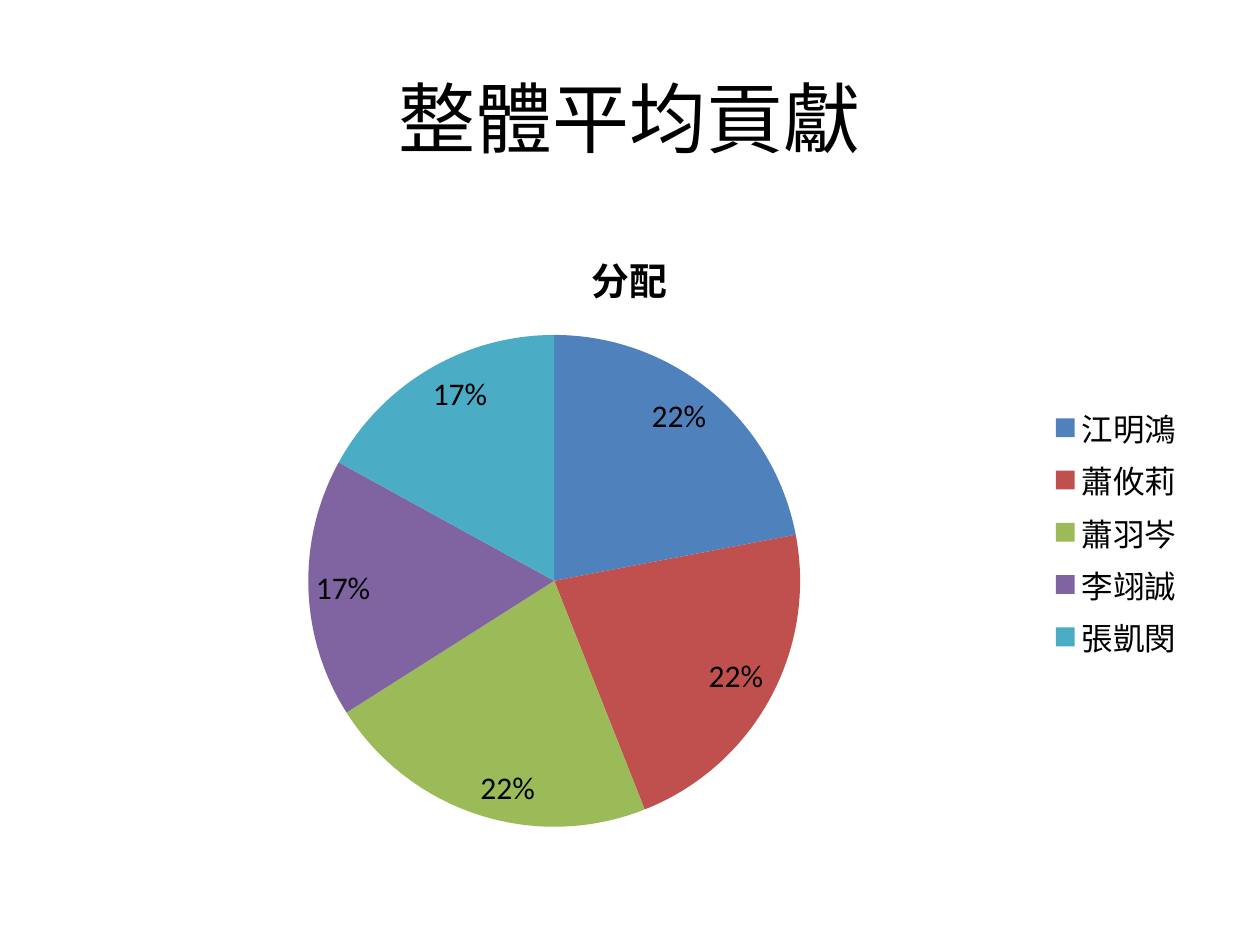
from lxml.etree import SubElement
from pptx import Presentation
from pptx.chart.data import CategoryChartData
from pptx.dml.color import RGBColor
from pptx.enum.chart import XL_CHART_TYPE, XL_LABEL_POSITION, XL_LEGEND_POSITION
from pptx.enum.text import MSO_ANCHOR, PP_ALIGN
from pptx.oxml.ns import qn
from pptx.util import Inches, Pt

WIDTH, HEIGHT = Inches(10), Inches(7.5)
MARGIN, CONTENT_WIDTH = 0.05, 0.9
CJK_FONT = "Noto Sans CJK SC"
BLACK = "000000"
SHARES = {
    "江明鴻": (22, "4F81BD"),
    "蕭攸莉": (22, "C0504D"),
    "蕭羽岑": (22, "9BBB59"),
    "李翊誠": (17, "8064A2"),
    "張凱閔": (17, "4BACC6"),
}


def paint(color_format, color):
    """Set a colour from a hex string."""
    color_format.rgb = RGBColor.from_string(color)


def apply(target, values):
    """Set attributes from a dict of format values."""
    for key, value in values.items():
        setattr(target, key, value)


def band(top, height):
    """Return a full-width box from shares of the slide height."""
    return {
        "left": int(WIDTH * MARGIN),
        "top": int(HEIGHT * top),
        "width": int(WIDTH * CONTENT_WIDTH),
        "height": int(HEIGHT * height),
    }


def write_title(slide, text):
    """Place and format the slide heading."""
    heading = slide.shapes.title
    apply(heading, band(0.04, 1 / 6))
    apply(heading.text_frame, {"text": text, "word_wrap": True, "vertical_anchor": MSO_ANCHOR.MIDDLE})
    paragraph = heading.text_frame.paragraphs[0]
    paragraph.alignment = PP_ALIGN.CENTER
    font = paragraph.runs[0].font
    apply(font, {"size": Pt(44), "name": CJK_FONT})
    paint(font.color, BLACK)
    SubElement(paragraph.runs[0]._r.get_or_add_rPr(), qn("a:ea"), typeface=CJK_FONT)


def add_share_pie(slide, name, shares):
    """Add a pie with percent labels and a legend on the right."""
    data = CategoryChartData()
    data.categories = list(shares)
    data.add_series(name, [value for value, _ in shares.values()])
    pie = slide.shapes.add_chart(
        XL_CHART_TYPE.PIE, *band(0.7 / 3, 0.66).values(), data
    ).chart
    apply(pie.font, {"size": Pt(18), "name": "Calibri"})
    paint(pie.font.color, BLACK)

    pie.has_title = True
    pie.chart_title.include_in_layout = False
    pie.chart_title.text_frame.text = name
    caption = pie.chart_title.text_frame.paragraphs[0].runs[0].font
    apply(caption, {"size": Pt(21.6), "bold": True})
    paint(caption.color, BLACK)

    pie.has_legend = True
    apply(pie.legend, {"position": XL_LEGEND_POSITION.RIGHT, "include_in_layout": False})

    plot = pie.plots[0]
    apply(plot, {"vary_by_categories": True, "has_data_labels": True})
    apply(plot.data_labels, {
        "show_percentage": True,
        "show_value": False,
        "number_format": "0%",
        "number_format_is_linked": False,
        "position": XL_LABEL_POSITION.INSIDE_END,
    })
    for index, (_, color) in enumerate(shares.values()):
        slice_fill = plot.series[0].points[index].format.fill
        slice_fill.solid()
        paint(slice_fill.fore_color, color)


def main():
    """Build the contribution slide."""
    deck = Presentation()
    apply(deck, {"slide_width": WIDTH, "slide_height": HEIGHT})
    slide = deck.slides.add_slide(deck.slide_layouts.get_by_name("Title Only"))
    write_title(slide, "整體平均貢獻")
    add_share_pie(slide, "分配", SHARES)
    deck.save("out.pptx")


if __name__ == "__main__":
    main()
